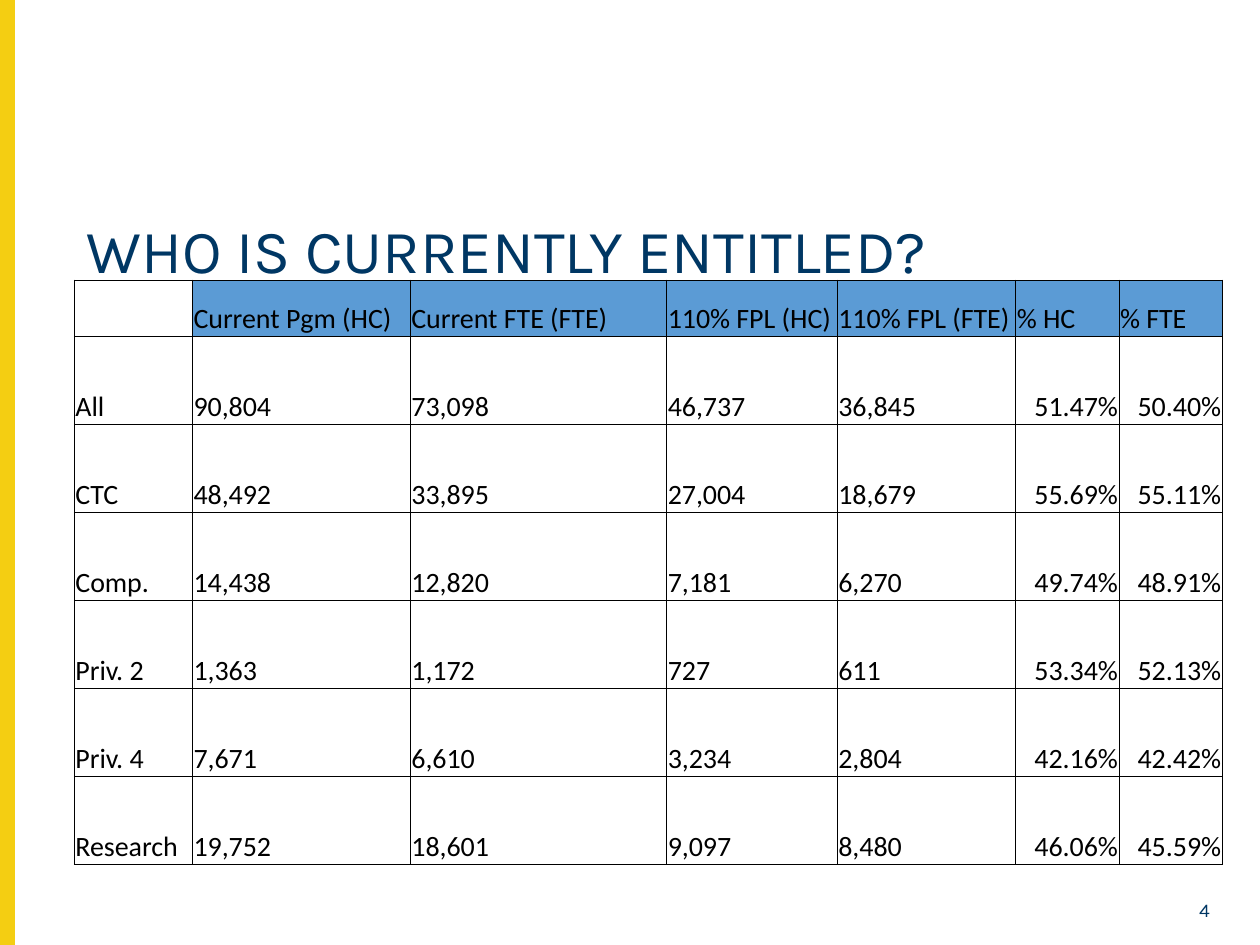
from lxml import etree
from pptx import Presentation
from pptx.dml.color import RGBColor
from pptx.enum import shapes, text
from pptx.oxml import ns
from pptx.util import Pt


def paint(color, value):
    color.rgb = RGBColor.from_string(value)


def edge(cell, value, width):
    """Draw a solid border on all four sides; call before filling the cell."""
    props = cell._tc.get_or_add_tcPr()
    for side in ("lnL", "lnR", "lnT", "lnB"):
        line = etree.SubElement(props, ns.qn("a:" + side), w=str(Pt(width)))
        fill = etree.SubElement(line, ns.qn("a:solidFill"))
        etree.SubElement(fill, ns.qn("a:srgbClr"), val=value)


NAVY, GOLD, BLUE, BLACK = "003764", "F4CE12", "5B9BD5", "000000"

deck = Presentation()
deck.slide_width, deck.slide_height = Pt(720), Pt(540)
slide = deck.slides.add_slide(deck.slide_layouts[5])

# Side bar
bar = slide.shapes.add_shape(
    shapes.MSO_SHAPE.RECTANGLE, Pt(0), Pt(0), Pt(8), Pt(540))
bar.shadow.inherit = False
bar.fill.solid()
paint(bar.fill.fore_color, GOLD)
paint(bar.line.color, GOLD)
bar.line.width = Pt(1)

# Title
title = slide.shapes.title
title.left, title.top, title.width, title.height = (
    Pt(42.5), Pt(122.4), Pt(656.6), Pt(62.6))
frame = title.text_frame
frame.text = "WHO IS CURRENTLY ENTITLED?"
frame.auto_size = text.MSO_AUTO_SIZE.NONE
frame.vertical_anchor = text.MSO_ANCHOR.TOP
para = frame.paragraphs[0]
para.alignment = text.PP_ALIGN.LEFT
para.line_spacing = 0.9
para.font.name, para.font.size = "Karla", Pt(35)
paint(para.font.color, NAVY)

# Page number
page = slide.shapes.add_textbox(Pt(661.7), Pt(510.5), Pt(36.7), Pt(18.7))
frame = page.text_frame
frame.word_wrap = True
frame.vertical_anchor = text.MSO_ANCHOR.MIDDLE
para = frame.paragraphs[0]
para.text = "4"
para.alignment = text.PP_ALIGN.RIGHT
para.font.name, para.font.size = "Karla", Pt(11)
paint(para.font.color, NAVY)

# Table
rows = [
    ("", "Current Pgm (HC)", "Current FTE (FTE)", "110% FPL (HC)",
     "110% FPL (FTE)", "% HC", "% FTE"),
    ("All", "90,804", "73,098", "46,737", "36,845", "51.47%", "50.40%"),
    ("CTC", "48,492", "33,895", "27,004", "18,679", "55.69%", "55.11%"),
    ("Comp.", "14,438", "12,820", "7,181", "6,270", "49.74%", "48.91%"),
    ("Priv. 2", "1,363", "1,172", "727", "611", "53.34%", "52.13%"),
    ("Priv. 4", "7,671", "6,610", "3,234", "2,804", "42.16%", "42.42%"),
    ("Research", "19,752", "18,601", "9,097", "8,480", "46.06%", "45.59%"),
]
widths = [67.5, 124.5, 146.5, 97.5, 102, 59, 59]
heights = [32] + [50.3] * 6
table = slide.shapes.add_table(
    len(rows), len(widths), Pt(42.5), Pt(160),
    Pt(sum(widths)), Pt(sum(heights))).table
table.first_row = table.horz_banding = False
for col, width in zip(table.columns, widths):
    col.width = Pt(width)
for row, height in zip(table.rows, heights):
    row.height = Pt(height)

for r, row in enumerate(rows):
    for c, label in enumerate(row):
        cell = table.cell(r, c)
        edge(cell, BLACK, 0.5)
        if r == 0 and c > 0:
            cell.fill.solid()
            paint(cell.fill.fore_color, BLUE)
        else:
            cell.fill.background()
        cell.margin_left = cell.margin_right = cell.margin_top = Pt(0.6)
        cell.margin_bottom = Pt(0)
        cell.vertical_anchor = text.MSO_ANCHOR.BOTTOM
        para = cell.text_frame.paragraphs[0]
        para.text = label
        if r > 0 and c > 4:
            para.alignment = text.PP_ALIGN.RIGHT
        para.font.name, para.font.size = "Calibri", Pt(16)
        paint(para.font.color, BLACK)

deck.save("out.pptx")
